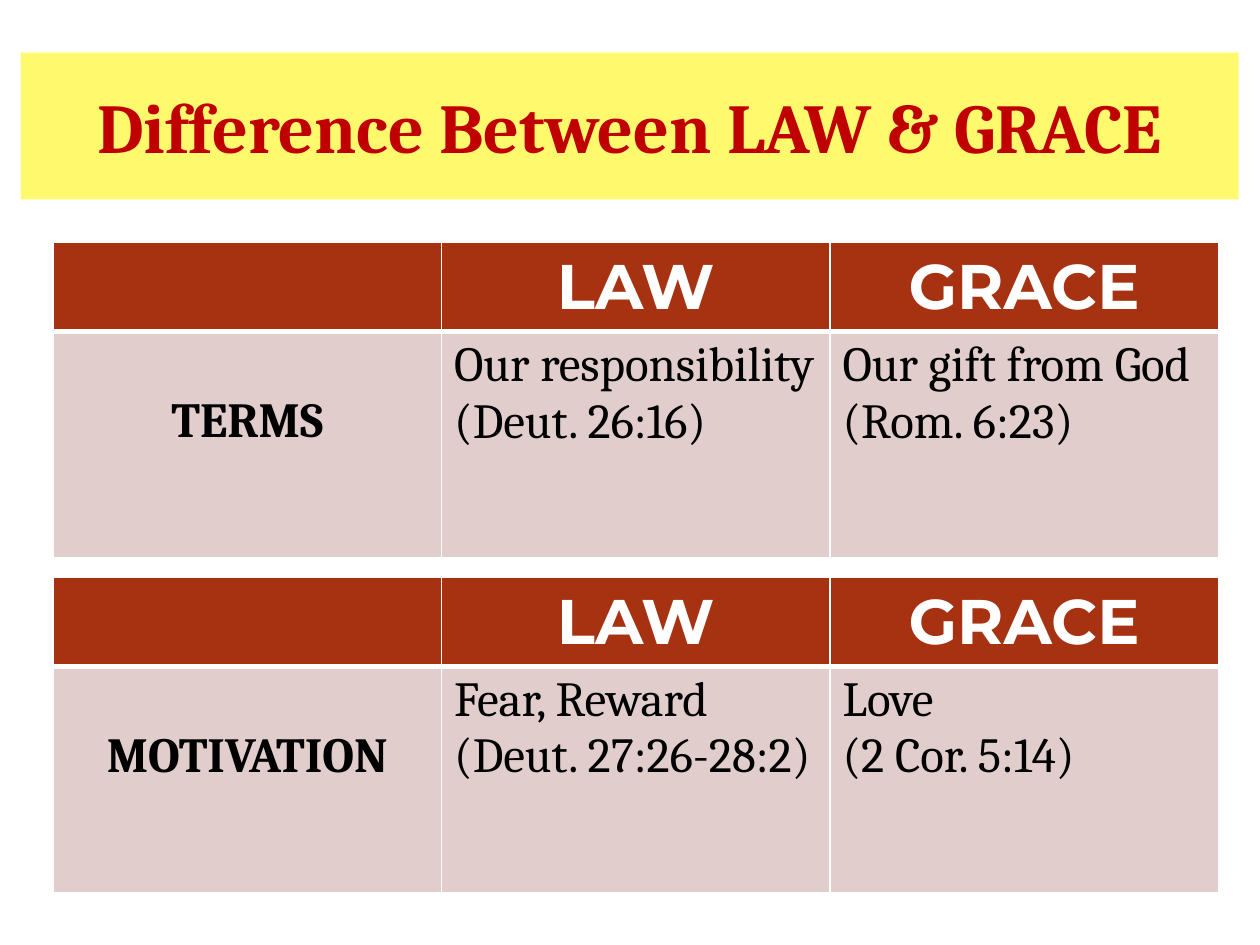
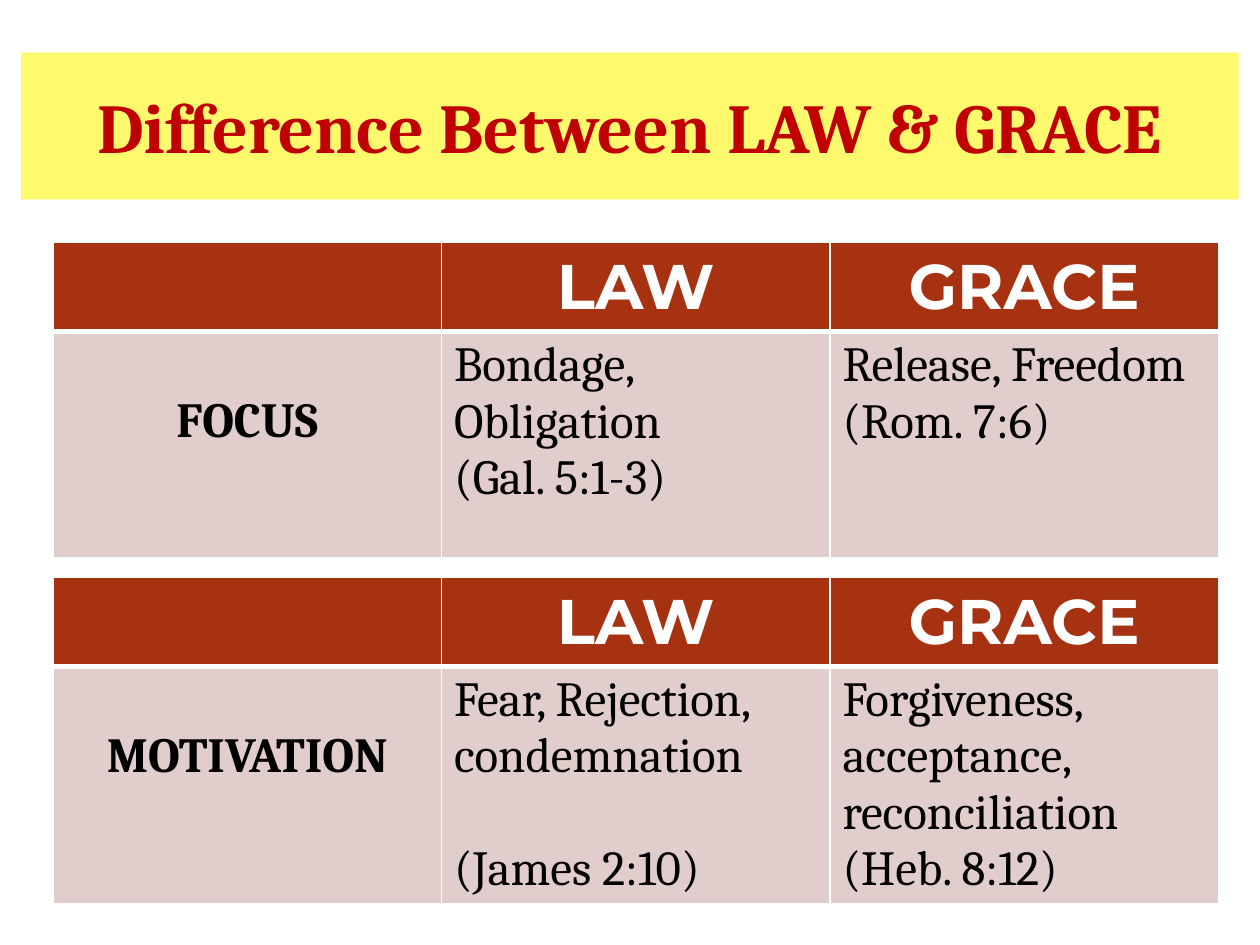
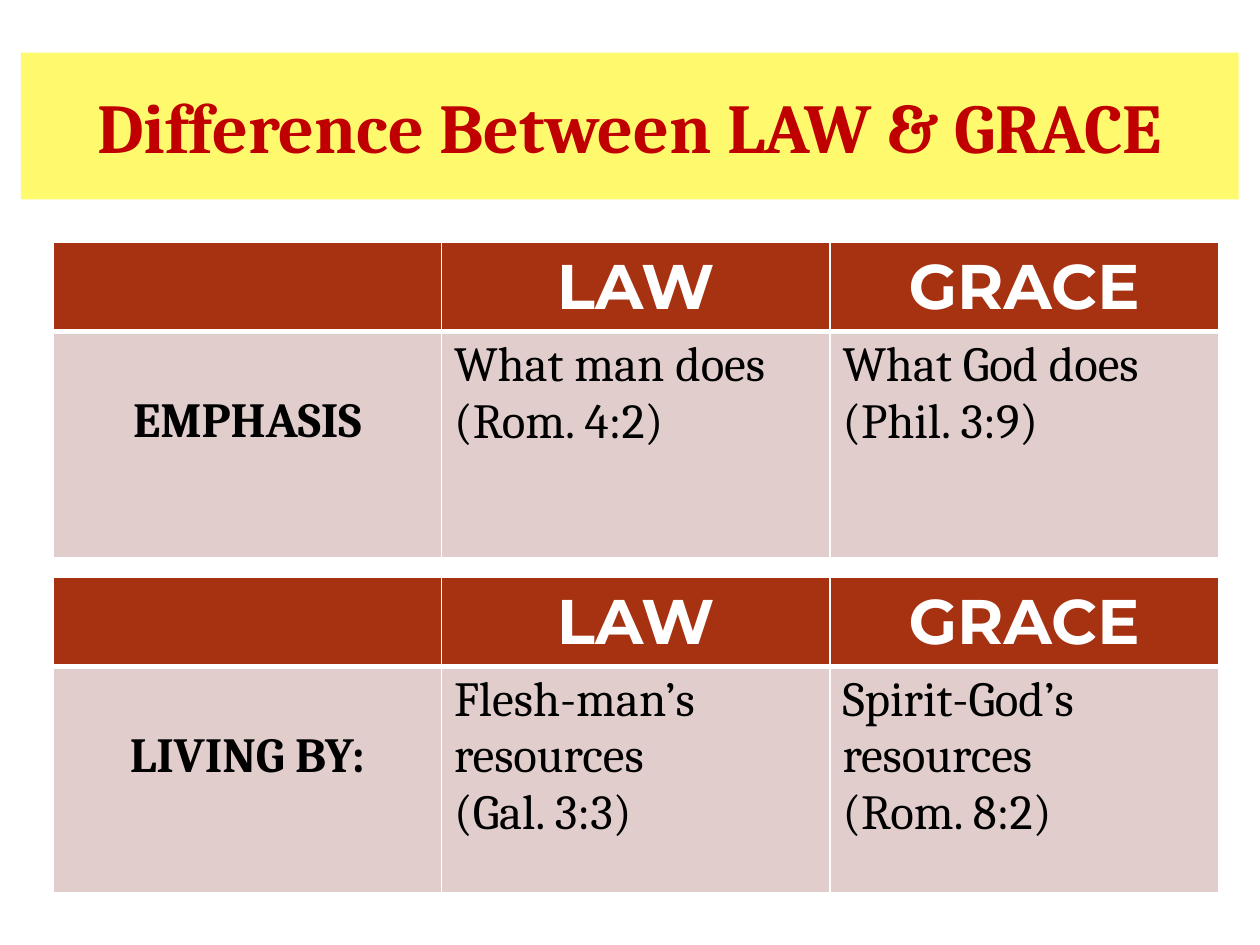
import lxml.etree
import pptx
import pptx.dml.color
import pptx.enum.shapes
import pptx.enum.text
import pptx.oxml.ns
import pptx.util

Cm = pptx.util.Cm
Pt = pptx.util.Pt
RGBColor = pptx.dml.color.RGBColor
MSO_ANCHOR = pptx.enum.text.MSO_ANCHOR
PP_ALIGN = pptx.enum.text.PP_ALIGN
qn = pptx.oxml.ns.qn

YELLOW = RGBColor(0xFF, 0xF9, 0x6D)
RED = RGBColor(0xC0, 0x00, 0x00)
RUST = RGBColor(0xA6, 0x32, 0x12)
PINK = RGBColor(0xE1, 0xCE, 0xCC)
WHITE = RGBColor(0xFF, 0xFF, 0xFF)
BLACK = RGBColor(0x00, 0x00, 0x00)

SERIF = "Cambria"
SANS = "Montserrat"
TITLE = "Difference Between LAW & GRACE"
HEADINGS = ("", "LAW", "GRACE")
LINE = Pt(32)
HEADER_HEIGHT = Cm(1.79)
BODY_HEIGHT = Cm(4.57)
TABLE_TOPS = (Cm(4.88), Cm(11.63))

SLIDES = [
    [
        ("TERMS", ["Our responsibility", "(Deut. 26:16)"],
         ["Our gift from God", "(Rom. 6:23)"]),
        ("MOTIVATION", ["Fear, Reward", "(Deut. 27:26-28:2)"],
         ["Love", "(2 Cor. 5:14)"]),
    ],
    [
        ("FOCUS", ["Bondage, Obligation", "(Gal. 5:1-3)"],
         ["Release, Freedom", "(Rom. 7:6)"]),
        ("MOTIVATION", ["Fear, Rejection, condemnation", "(James 2:10)"],
         ["Forgiveness, acceptance, reconciliation", "(Heb. 8:12)"], LINE),
    ],
    [
        ("EMPHASIS", ["What man does", "(Rom. 4:2)"],
         ["What God does", "(Phil. 3:9)"]),
        ("LIVING BY:", ["Flesh-man’s resources", "(Gal. 3:3)"],
         ["Spirit-God’s resources", "(Rom. 8:2)"]),
    ],
]


class Deck:
    def __init__(self):
        self.prs = pptx.Presentation()
        self.prs.slide_width = Cm(25.4)
        self.prs.slide_height = Cm(19.05)
        self.s = None

    def slide(self):
        self.s = self.prs.slides.add_slide(self.prs.slide_layouts[6])

    def add_text(self, p, text, size, font, color, bold=False, align=PP_ALIGN.LEFT):
        p.alignment = align
        r = p.add_run()
        r.text = text
        r.font.size = Pt(size)
        r.font.name = font
        r.font.bold = bold
        r.font.color.rgb = color

    def title(self, text):
        sp = self.s.shapes.add_shape(
            pptx.enum.shapes.MSO_SHAPE.RECTANGLE,
            Cm(0.42), Cm(1.06), Cm(24.55), Cm(2.96))
        sp.shadow.inherit = False
        sp.fill.solid()
        sp.fill.fore_color.rgb = YELLOW
        sp.line.fill.background()
        tf = sp.text_frame
        tf.word_wrap = True
        tf.vertical_anchor = MSO_ANCHOR.MIDDLE
        self.add_text(tf.paragraphs[0], text, 40, SERIF, RED, True, PP_ALIGN.CENTER)

    def style_cell(self, cell, fill, top, bottom):
        tc_pr = cell._tc.get_or_add_tcPr()
        for side, width in (("L", 1), ("R", 1), ("T", top), ("B", bottom)):
            ln = lxml.etree.SubElement(tc_pr, qn(f"a:ln{side}"), w=str(Pt(width)))
            solid = lxml.etree.SubElement(ln, qn("a:solidFill"))
            lxml.etree.SubElement(solid, qn("a:srgbClr"), val=str(WHITE))
        cell.fill.solid()
        cell.fill.fore_color.rgb = fill

    def table(self, top, label, law, grace, law_gap=0):
        frame = self.s.shapes.add_table(
            2, 3, Cm(1.07), top, Cm(23.49), HEADER_HEIGHT + BODY_HEIGHT)
        tbl = frame.table
        tbl.horz_banding = False
        tbl.rows[0].height = HEADER_HEIGHT
        tbl.rows[1].height = BODY_HEIGHT
        for col, heading in enumerate(HEADINGS):
            cell = tbl.cell(0, col)
            self.style_cell(cell, RUST, 1, 3)
            if heading:
                self.add_text(cell.text_frame.paragraphs[0], heading, 36, SANS,
                              WHITE, True, PP_ALIGN.CENTER)
            self.style_cell(tbl.cell(1, col), PINK, 3, 1)

        cell = tbl.cell(1, 0)
        cell.margin_top = Cm(0.13) + LINE
        self.add_text(cell.text_frame.paragraphs[0], label, 28, SERIF, BLACK,
                      True, PP_ALIGN.CENTER)
        for col, (statement, verse), gap in ((1, law, law_gap), (2, grace, 0)):
            tf = tbl.cell(1, col).text_frame
            self.add_text(tf.paragraphs[0], statement, 28, SERIF, BLACK)
            p = tf.add_paragraph()
            p.space_before = Pt(gap / Pt(1))
            self.add_text(p, verse, 28, SERIF, BLACK)


def main():
    deck = Deck()
    for comparisons in SLIDES:
        deck.slide()
        deck.title(TITLE)
        for top, comparison in zip(TABLE_TOPS, comparisons):
            deck.table(top, *comparison)
    deck.prs.save("out.pptx")


if __name__ == "__main__":
    main()
